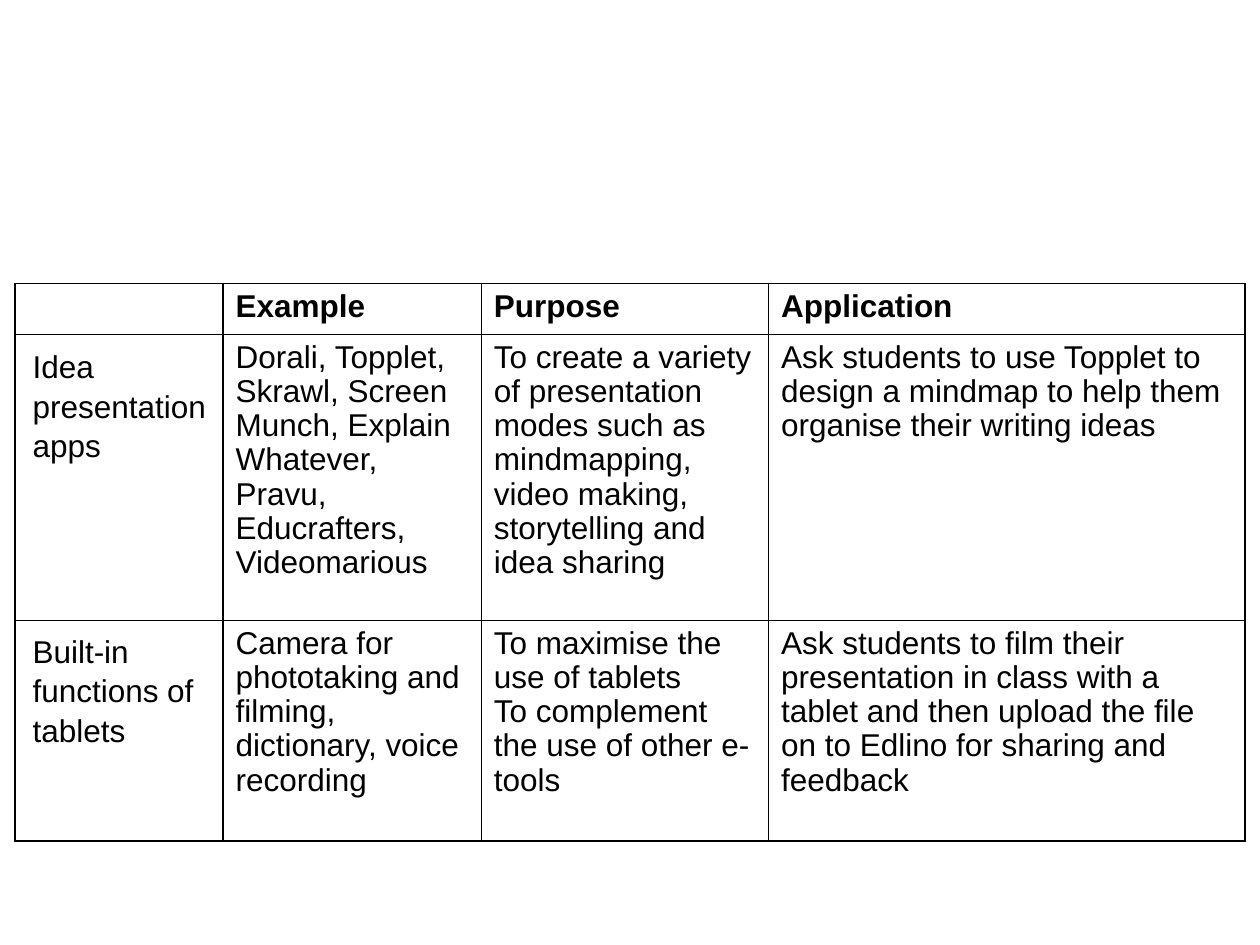
"""Build a slide with a table of tablet tools for the classroom."""
from lxml import etree
from pptx import Presentation
from pptx.dml.color import RGBColor
from pptx.enum.text import MSO_AUTO_SIZE
from pptx.oxml.ns import qn
from pptx.util import Inches, Pt

GROW = MSO_AUTO_SIZE.SHAPE_TO_FIT_TEXT
BLANK_LAYOUT = 6
FONT, SIZE = "Arial", 18
BLACK, WHITE = "000000", "FFFFFF"

HEADERS = ["", "Example", "Purpose", "Application"]
TOOLS = [
    ("Idea presentation apps",
     ["Dorali, Topplet, Skrawl, Screen Munch, Explain Whatever, Pravu, "
      "Educrafters, Videomarious"],
     ["To create a variety of presentation modes such as mindmapping, "
      "video making, storytelling and idea sharing"],
     ["Ask students to use Topplet to design a mindmap to help them "
      "organise their writing ideas"]),
    ("Built-in functions of tablets",
     ["Camera for phototaking and filming, dictionary, voice recording"],
     ["To maximise the use of tablets",
      "To complement the use of other e-tools"],
     ["Ask students to film their presentation in class with a tablet and "
      "then upload the file on to Edlino for sharing and feedback"]),
]
LEFT, TOP = 0.12, 2.25
COLS = [1.65, 2.05, 2.28, 3.78]
ROWS = [0.4, 2.27, 1.75]
LABEL_LEFT, LABEL_SIZE = 0.16, (1.58, 1.01)
LABEL_TOPS = [2.69, 4.95]


def rgb(value):
    """Turn a hex string into a colour."""
    return RGBColor.from_string(value)


def write(tf, paragraphs, spacing, bold=False):
    """Fill a text frame with one run per paragraph."""
    tf.word_wrap = True
    for i, text in enumerate(paragraphs):
        p = tf.add_paragraph() if i else tf.paragraphs[0]
        p.line_spacing = spacing
        r = p.add_run()
        r.text = text
        r.font.name, r.font.size, r.font.bold = FONT, Pt(SIZE), bold
        r.font.color.rgb = rgb(BLACK)


def style_cell(cell):
    """Give a cell thin black borders and a white fill."""
    tc_pr = cell._tc.get_or_add_tcPr()
    for side in ("a:lnL", "a:lnR", "a:lnT", "a:lnB"):
        ln = etree.SubElement(tc_pr, qn(side), w=str(Pt(1)))
        fill = etree.SubElement(ln, qn("a:solidFill"))
        etree.SubElement(fill, qn("a:srgbClr"), val=BLACK)
    cell.fill.solid()
    cell.fill.fore_color.rgb = rgb(WHITE)


def add_tools_table(s):
    """Add the table with its header and body cells."""
    table = s.shapes.add_table(
        len(ROWS), len(COLS), Inches(LEFT), Inches(TOP),
        Inches(sum(COLS)), Inches(sum(ROWS))).table
    for column, width in zip(table.columns, COLS):
        column.width = Inches(width)
    for row, height in zip(table.rows, ROWS):
        row.height = Inches(height)
    body = [[[], *texts] for _, *texts in TOOLS]
    header = [[text] if text else [] for text in HEADERS]
    for i, row in enumerate([header, *body]):
        for j, paragraphs in enumerate(row):
            cell = table.cell(i, j)
            style_cell(cell)
            write(cell.text_frame, paragraphs, 0.97, bold=i == 0)


def add_row_label(s, text, top):
    """Add the name of a tool group over the first column."""
    sp = s.shapes.add_textbox(Inches(LABEL_LEFT), Inches(top),
                              *map(Inches, LABEL_SIZE))
    write(sp.text_frame, [text], 1.05)
    sp.text_frame.auto_size = GROW


def main():
    """Build and save the slide."""
    prs = Presentation()
    prs.slide_width, prs.slide_height = Inches(10), Inches(7.5)
    s = prs.slides.add_slide(prs.slide_layouts[BLANK_LAYOUT])
    add_tools_table(s)
    for (label, *_), top in zip(TOOLS, LABEL_TOPS):
        add_row_label(s, label, top)
    prs.save("out.pptx")


if __name__ == "__main__":
    main()
